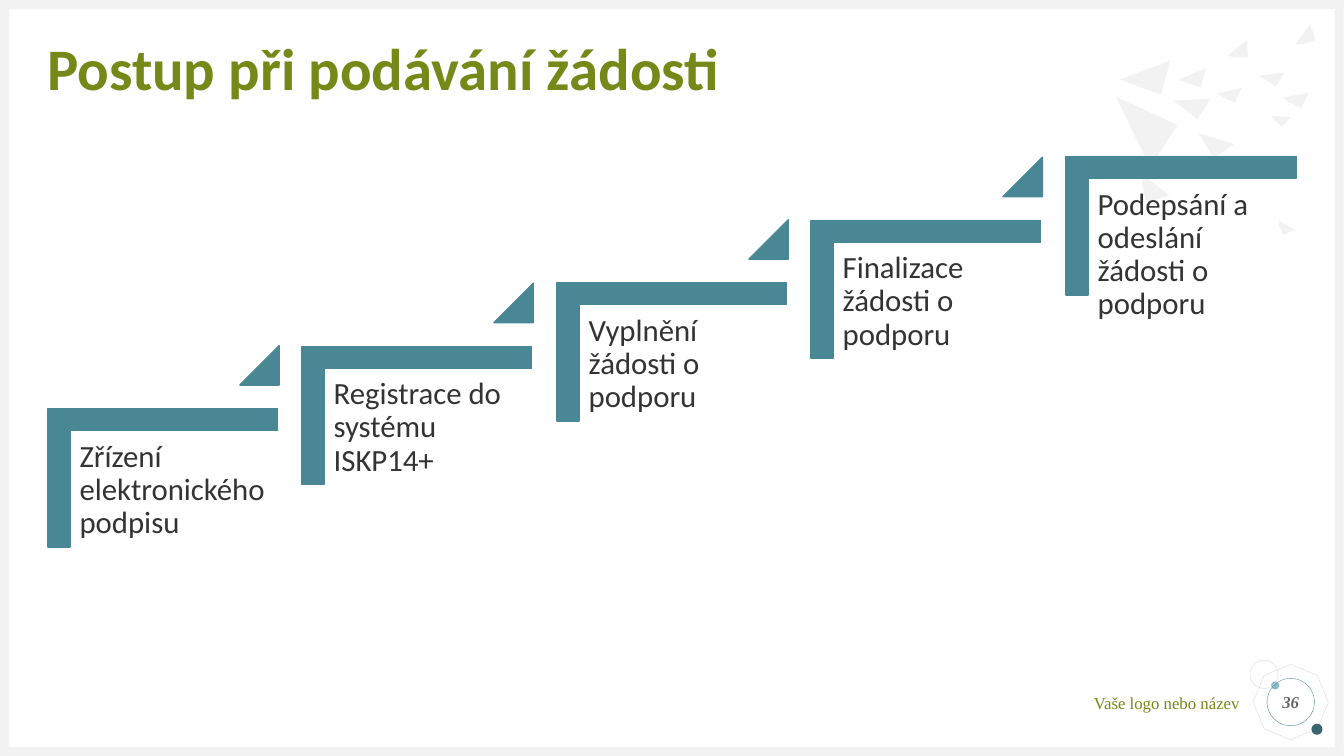
"""Build the slide that shows the five steps of filing an application."""
from pptx import Presentation, util as u
from pptx.dml.color import RGBColor
from pptx.enum import shapes, text

PX = 9144
OLIVE = RGBColor(0x75, 0x89, 0x18)
TEAL = RGBColor(0x4A, 0x87, 0x95)
LIGHT_TEAL = RGBColor(0x8C, 0xBB, 0xC6)
DARK_TEAL = RGBColor(0x37, 0x65, 0x70)
PALE = RGBColor(0xF2, 0xF2, 0xF2)
SILVER = RGBColor(0xD9, 0xD9, 0xD9)
DARK = RGBColor(0x33, 0x33, 0x33)
GRAY = RGBColor(0x66, 0x66, 0x66)
KIND = shapes.MSO_SHAPE

deck = Presentation()
deck.slide_width, deck.slide_height = u.Inches(13.333), u.Inches(7.5)
page = deck.slides.add_slide(deck.slide_layouts[5])


def paint(shape, fill=None, line=None, width=0.25):
    """Set the fill and outline of a shape, leaving out what is None."""
    shape.shadow.inherit = False
    if fill is None:
        shape.fill.background()
    else:
        shape.fill.solid()
        shape.fill.fore_color.rgb = fill
    if line is None:
        shape.line.fill.background()
    else:
        shape.line.color.rgb = line
        shape.line.width = u.Pt(width)
    return shape


def write(shape, words, color, align=text.PP_ALIGN.LEFT, spacing=1.0, margin=0,
          anchor=text.MSO_ANCHOR.TOP, **font):
    """Put one formatted paragraph into a shape."""
    frame = shape.text_frame
    frame_format = {"word_wrap": True, "auto_size": text.MSO_AUTO_SIZE.NONE,
                    "vertical_anchor": anchor}
    for side in ("left", "right", "top", "bottom"):
        frame_format[f"margin_{side}"] = margin * PX
    for name, value in frame_format.items():
        setattr(frame, name, value)
    para = frame.paragraphs[0]
    para.alignment, para.line_spacing = align, spacing
    span = para.add_run()
    span.text = words
    for name, value in font.items():
        setattr(span.font, name, value)
    span.font.color.rgb = color


ornaments = [
    (KIND.OCTAGON, 1246, 662, 69, 69, None, SILVER),
    (KIND.OVAL, 1261, 676, 8, 8, LIGHT_TEAL, None),
    (KIND.OVAL, 1301, 718, 11, 11, DARK_TEAL, None),
    (KIND.OVAL, 1240, 655, 28, 28, None, SILVER),
    (KIND.RECTANGLE, 0, 741, 1333, 9, PALE, None),
    (KIND.RECTANGLE, 0, 0, 1333, 9, PALE, None),
    (KIND.RECTANGLE, 0, 0, 9, 750, PALE, None),
    (KIND.RECTANGLE, 1324, 0, 9, 750, PALE, None),
]
for kind, left, top, width, height, fill, line in ornaments:
    ornament = page.shapes.add_shape(kind, left * PX, top * PX, width * PX, height * PX)
    paint(ornament, fill, line)
    if kind == KIND.OCTAGON:
        ornament.rotation = 22.7

shards = [
    [(1161, 60), (1152, 94), (1111, 79)],
    [(1201, 98), (1188, 118), (1164, 100)],
    [(1196, 68), (1191, 87), (1169, 79)],
    [(1232, 87), (1225, 102), (1207, 93)],
    [(1237, 40), (1238, 57), (1224, 57), (1218, 55)],
    [(1280, 116), (1272, 126), (1264, 119), (1261, 115)],
    [(1300, 24), (1305, 40), (1292, 44), (1285, 44)],
    [(1274, 72), (1266, 86), (1249, 75)],
    [(1298, 92), (1291, 107), (1278, 101), (1273, 97)],
    [(1168, 124), (1141, 166), (1107, 96)],
    [(1224, 143), (1204, 157), (1189, 132)],
    [(1276, 166), (1269, 176), (1260, 169), (1258, 165)],
    [(1160, 194), (1137, 201), (1131, 171)],
    [(1285, 228), (1273, 233), (1269, 223), (1269, 219)],
]
for points in shards:
    outline = page.shapes.build_freeform(*points[0], scale=PX)
    outline.add_line_segments(points[1:], close=True)
    paint(outline.convert_to_shape(), PALE)

logo_box = page.shapes.add_textbox(955 * PX, 687 * PX, 275 * PX, 20 * PX)
write(logo_box, "Vaše logo nebo název", OLIVE, text.PP_ALIGN.RIGHT,
      size=u.Pt(12), name="Times New Roman")

steps = [
    "Zřízení elektronického podpisu",
    "Registrace do systému ISKP14+",
    "Vyplnění žádosti o podporu",
    "Finalizace žádosti o podporu",
    "Podepsání a odeslání žádosti o podporu",
]
for index, step in enumerate(steps):
    left, top = 93 + index * 505 // 2, 360 - index * 125 // 2
    corner = page.shapes.add_shape(KIND.CORNER, left * PX, top * PX, 137 * PX, 228 * PX)
    corner.rotation = 90
    corner.adjustments[0] = corner.adjustments[1] = 0.16
    paint(corner, TEAL, TEAL, 1)
    step_box = page.shapes.add_textbox((left - 23) * PX, (top + 68) * PX, 206 * PX, 181 * PX)
    write(step_box, step, DARK, spacing=0.9, margin=9, size=u.Pt(22), name="Calibri")
    if index < len(steps) - 1:
        triangle = page.shapes.add_shape(KIND.ISOSCELES_TRIANGLE, (left + 145) * PX,
                                         (top - 17) * PX, 39 * PX, 39 * PX)
        triangle.adjustments[0] = 1
        paint(triangle, TEAL, TEAL, 1)

title = page.shapes.title
title.left, title.top, title.width, title.height = 47 * PX, 47 * PX, 1240 * PX, 47 * PX
write(title, "Postup při podávání žádosti", OLIVE, spacing=0.9,
      anchor=text.MSO_ANCHOR.MIDDLE, size=u.Pt(42), name="Calibri", bold=True)

number_ring = page.shapes.add_shape(KIND.OVAL, 1257 * PX, 673 * PX, 47 * PX, 47 * PX)
paint(number_ring, None, TEAL)
write(number_ring, "36", GRAY, text.PP_ALIGN.CENTER, anchor=text.MSO_ANCHOR.MIDDLE,
      size=u.Pt(12), name="Times New Roman", bold=True, italic=True)

deck.save("out.pptx")
